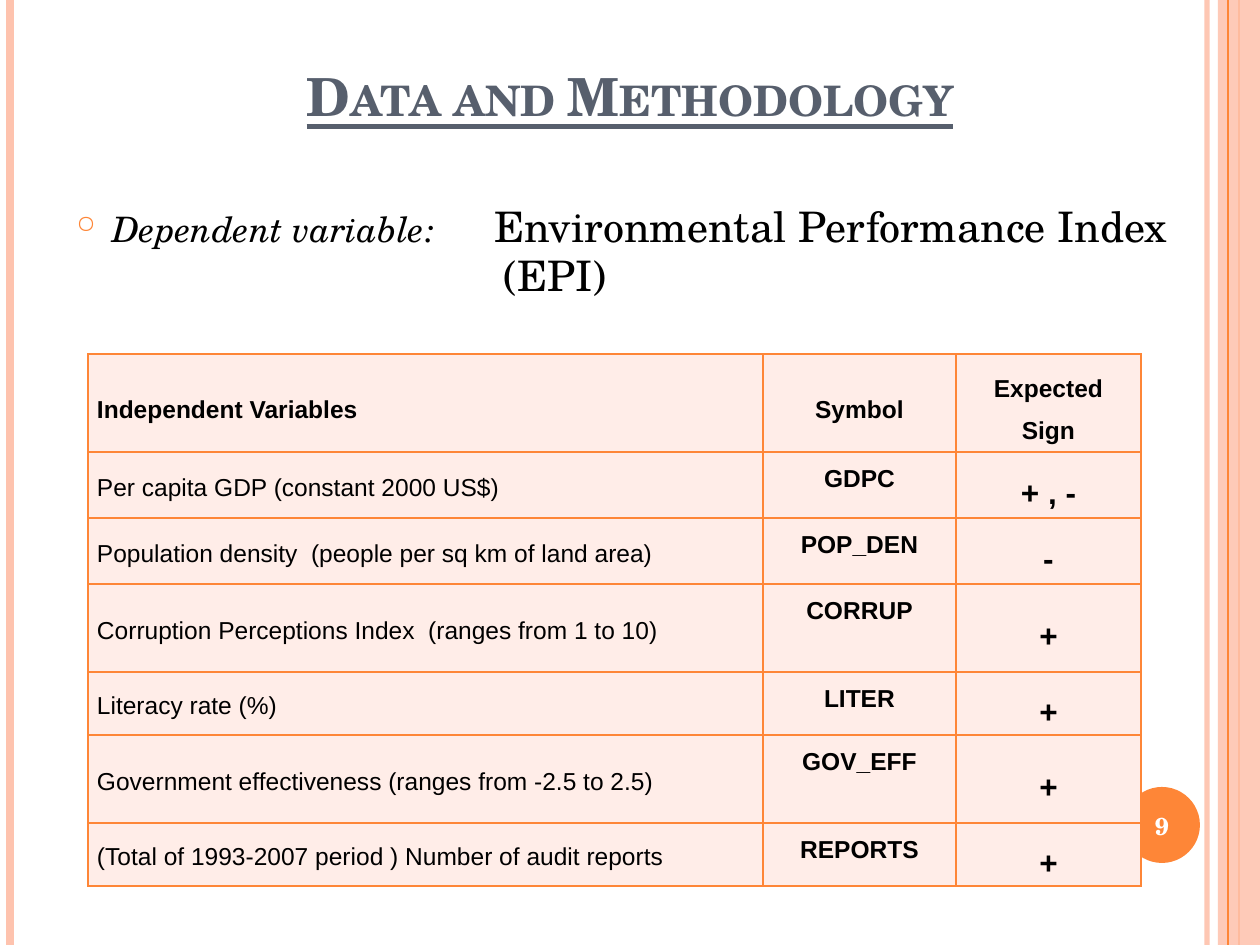
from dataclasses import dataclass
from lxml.etree import SubElement as Sub
from pptx import Presentation
from pptx.dml.color import RGBColor as Rgb
from pptx.enum.shapes import MSO_CONNECTOR as Link, MSO_SHAPE as Form
from pptx.enum.text import MSO_ANCHOR as Anchor, PP_ALIGN as Align
from pptx.oxml.ns import qn
from pptx.util import Emu, Pt


@dataclass(frozen=True)
class Theme:
    serif: str = "TeX Gyre Schola"
    sans: str = "Arial"
    accent: str = "FE8637"
    pale: str = "FEC3AE"
    cell: str = "FFEDE8"
    slate: str = "575F6D"
    black: str = "000000"
    white: str = "FFFFFF"
    title: int = 30
    index: int = 24
    label: int = 20
    sign: int = 18
    small: int = 14


T = Theme()
WIDE, HIGH = 1260, 945
COLS = (675, 193, 185)
ROWS = (98, 66, 66, 88, 63, 88, 63)
HEAD = ("Independent Variables", "Symbol", "Expected Sign")
DATA = (
    ("Per capita GDP (constant 2000 US$)", "GDPC", "+ , -"),
    ("Population density  (people per sq km of land area)", "POP_DEN", "-"),
    ("Corruption Perceptions Index  (ranges from 1 to 10)", "CORRUP", "+"),
    ("Literacy rate (%)", "LITER", "+"),
    ("Government effectiveness (ranges from -2.5 to 2.5)", "GOV_EFF", "+"),
    ("(Total of 1993-2007 period ) Number of audit reports", "REPORTS", "+"),
)


def px(num):
    return Emu(round(num * 914400 / 126))


def box(*nums):
    return [px(num) for num in nums]


def fade(shape, part):
    tone = next(shape._element.iter(qn("a:srgbClr")))
    Sub(tone, qn("a:alpha"), val=str(part * 1000))


def add_rule(slide, x, tone, width, part=100):
    rule = slide.shapes.add_connector(Link.STRAIGHT, *box(x, 0, x, HIGH))
    rule.line.color.rgb = Rgb.from_string(tone)
    rule.line.width = Pt(width)
    Sub(rule._element.spPr, qn("a:effectLst"))
    if part < 100:
        fade(rule, part)


def add_form(slide, kind, place, tone):
    form = slide.shapes.add_shape(kind, *box(*place))
    form.shadow.inherit = False
    form.fill.solid()
    form.fill.fore_color.rgb = Rgb.from_string(tone)
    form.line.fill.background()
    return form


def add_run(para, text, size, tone, face=T.serif, bold=False, slant=False):
    run = para.add_run()
    run.text = text
    font = run.font
    font.name, font.size = face, Pt(size)
    font.bold, font.italic = bold, slant
    font.color.rgb = Rgb.from_string(tone)
    return run


def add_text(slide, place):
    frame = slide.shapes.add_textbox(*box(*place)).text_frame
    frame.word_wrap = True
    return frame


def indent(para, left, first=0):
    props = para._p.get_or_add_pPr()
    props.set("marL", str(px(left)))
    props.set("indent", str(px(first)))
    return props


def add_title(slide):
    title = slide.shapes.title
    title.left, title.top, title.width, title.height = box(63, 39, 1134, 88)
    frame = title.text_frame
    frame.vertical_anchor = Anchor.BOTTOM
    frame.margin_top = frame.margin_bottom = 0
    para = frame.paragraphs[0]
    para.alignment = Align.CENTER
    run = add_run(para, "Data and Methodology", T.title, T.slate, bold=True)
    run.font.underline = True
    run.font._element.set("cap", "small")


def add_body(slide):
    frame = add_text(slide, (64, 137, 1134, 197))
    frame.margin_top = px(63)
    first = frame.paragraphs[0]
    props = indent(first, 36, -36)
    tone = Sub(props, qn("a:buClr"))
    Sub(tone, qn("a:srgbClr"), val=T.accent)
    Sub(props, qn("a:buSzPct"), val="70000")
    Sub(props, qn("a:buChar"), char="○")
    add_run(first, "Dependent variable:", T.label, T.black, slant=True)
    gap = add_run(first, " ", T.label, T.black, slant=True)
    gap.font._element.set("spc", "2870")
    add_run(first, "Environmental Performance Index", T.index, T.black)
    last = frame.add_paragraph()
    indent(last, 427)
    last.line_spacing = 0.8
    last.space_before = Pt(4.8)
    add_run(last, "(EPI)", T.index, T.black)


def set_edges(cell):
    props = cell._tc.get_or_add_tcPr()
    for side in ("lnL", "lnR", "lnT", "lnB"):
        edge = Sub(props, qn(f"a:{side}"), w=str(Pt(1)))
        fill = Sub(edge, qn("a:solidFill"))
        Sub(fill, qn("a:srgbClr"), val=T.accent)


def set_cell(cell, text, row, col):
    set_edges(cell)
    cell.fill.solid()
    cell.fill.fore_color.rgb = Rgb.from_string(T.cell)
    cell.margin_left = cell.margin_right = px(9)
    cell.margin_top = cell.margin_bottom = 0
    cell.vertical_anchor = Anchor.TOP if row and col == 1 else Anchor.MIDDLE
    para = cell.text_frame.paragraphs[0]
    para.alignment = Align.CENTER if col else Align.LEFT
    para.line_spacing = 1.2 if row and not col else 1.5
    size = T.sign if row and col == 2 else T.small
    add_run(para, text, size, T.black, T.sans, bold=not row or col > 0)


def add_grid(slide):
    place = box(88, 354, sum(COLS), sum(ROWS))
    grid = slide.shapes.add_table(len(ROWS), len(COLS), *place).table
    grid.first_row = grid.horz_banding = False
    for col, width in zip(grid.columns, COLS):
        col.width = px(width)
    for row, height in zip(grid.rows, ROWS):
        row.height = px(height)
    for i, texts in enumerate((HEAD, *DATA)):
        for j, text in enumerate(texts):
            set_cell(grid.cell(i, j), text, i, j)


def add_trim(slide):
    add_rule(slide, 1207, T.pale, 3, 93)
    add_rule(slide, 10, T.pale, 4.5)
    add_rule(slide, 1239, T.accent, 1.5)
    fade(add_form(slide, Form.RECTANGLE, (1218, 0, 42, HIGH), T.pale), 87)
    add_rule(slide, 1228, T.accent, 0.75)
    add_form(slide, Form.OVAL, (1124, 787, 76, 76), T.accent)


def add_page(slide):
    frame = add_text(slide, (1120, 790, 84, 72))
    frame.vertical_anchor = Anchor.MIDDLE
    para = frame.paragraphs[0]
    para.alignment = Align.CENTER
    add_run(para, "9", T.small, T.white, bold=True)


def main():
    deck = Presentation()
    deck.slide_width, deck.slide_height = box(WIDE, HIGH)
    slide = deck.slides.add_slide(deck.slide_layouts[5])
    add_trim(slide)
    add_title(slide)
    add_body(slide)
    add_grid(slide)
    add_page(slide)
    deck.save("out.pptx")


if __name__ == "__main__":
    main()
